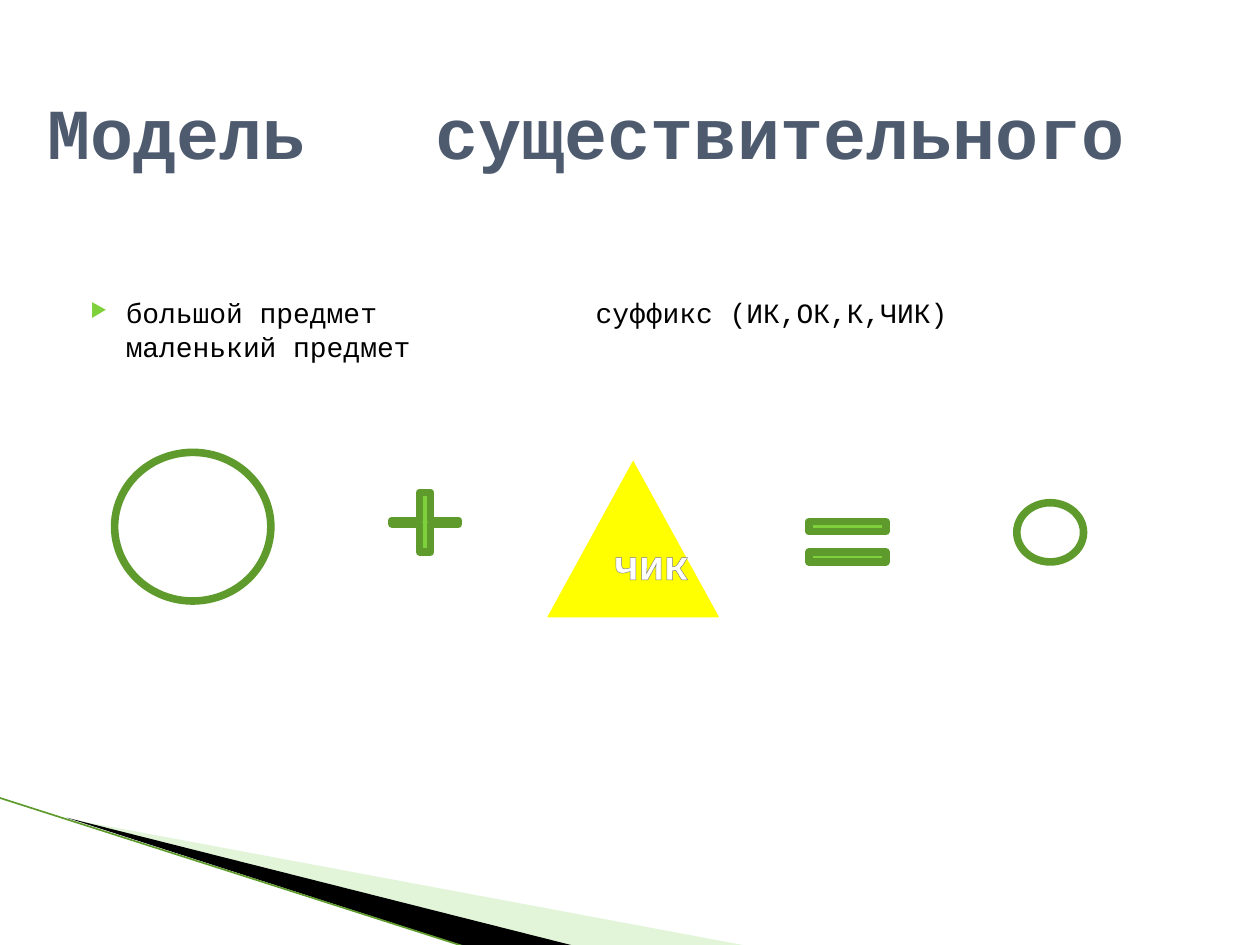
from lxml import etree
from pptx import Presentation
from pptx.dml.color import RGBColor
from pptx.enum import shapes, text
from pptx.oxml.ns import qn
from pptx.util import Inches, Pt

GREEN = RGBColor(0x7F, 0xD1, 0x3B)
DARK_GREEN = RGBColor(0x5E, 0x9B, 0x2C)
PALE_GREEN = RGBColor(0xB8, 0xE7, 0xA1)
YELLOW = RGBColor(0xFF, 0xFF, 0x00)
SLATE = RGBColor(0x4E, 0x5B, 0x6F)
GREY = RGBColor(0x7D, 0x7D, 0x7D)
BLACK = RGBColor(0, 0, 0)
WHITE = RGBColor(0xFF, 0xFF, 0xFF)
FONT = "Courier New"

TITLE = "Модель\tсуществительного"
OBJECTS = "большой предмет\vмаленький предмет"
SUFFIXES = "суффикс (ИК,ОК,К,ЧИК)"
SUFFIX = "чик"

WEDGES = [
    ([(0.55, 6.5), (5.95, 7.51), (4.56, 7.51)], PALE_GREEN, 40),
    ([(0.53, 6.49), (4.57, 7.51), (3.72, 7.52)], BLACK, 100),
]
KIND = shapes.MSO_SHAPE
BAR_TOPS = (4.14, 4.38)
FIGURES = [
    (KIND.OVAL, (0.91, 3.59, 1.24, 1.18), WHITE, DARK_GREEN),
    (KIND.CROSS, (3.11, 3.91, 0.53, 0.47), GREEN, DARK_GREEN),
    *[(KIND.RECTANGLE, (6.42, top, 0.61, 0.08), GREEN, DARK_GREEN) for top in BAR_TOPS],
    (KIND.OVAL, (8.07, 3.99, 0.53, 0.47), WHITE, DARK_GREEN),
    (KIND.ISOSCELES_TRIANGLE, (4.29, 3.59, 1.47, 1.34), YELLOW, WHITE),
]


def add_child(parent, tag, **attributes):
    return etree.SubElement(parent, qn(tag), attributes)


def add_wedge(page, points, color, opacity):
    builder = page.shapes.build_freeform(*map(Inches, points[0]), scale=1.0)
    builder.add_line_segments([tuple(map(Inches, point)) for point in points[1:]])
    wedge = builder.convert_to_shape()
    wedge.shadow.inherit = False
    wedge.fill.solid()
    wedge.fill.fore_color.rgb = color
    wedge.line.fill.background()
    if opacity < 100:
        fill_color = wedge._element.spPr.find(".//" + qn("a:srgbClr"))
        add_child(fill_color, "a:alpha", val=str(opacity * 1000))


def add_figure(page, kind, place, fill, line):
    figure = page.shapes.add_shape(kind, *map(Inches, place))
    figure.shadow.inherit = False
    figure.fill.solid()
    figure.fill.fore_color.rgb = fill
    figure.line.color.rgb = line
    figure.line.width = Pt(4.33)
    if kind == KIND.CROSS:
        figure.adjustments[0] = 0.47


def add_text(page, wording, place, size, color, bold=False, anchor=text.MSO_ANCHOR.TOP):
    box = page.shapes.add_textbox(*map(Inches, place))
    box.text_frame.word_wrap = True
    box.text_frame.vertical_anchor = anchor
    para = box.text_frame.paragraphs[0]
    para.text = wording
    para.font.name = FONT
    para.font.size = Pt(size)
    para.font.bold = bold
    para.font.color.rgb = color
    return para


def add_bullet(para):
    properties = para._p.get_or_add_pPr()
    properties.set("marL", str(Inches(0.4)))
    properties.set("indent", str(Inches(-0.28)))
    bullet_color = etree.Element(qn("a:buClr"))
    add_child(bullet_color, "a:srgbClr", val=str(GREEN))
    bullet_size = etree.Element(qn("a:buSzPct"), val="68000")
    bullet = etree.Element(qn("a:buChar"), char="▶")
    for position, element in enumerate((bullet_color, bullet_size, bullet)):
        properties.insert(position, element)


def add_tab(para, position):
    tabs = etree.Element(qn("a:tabLst"))
    add_child(tabs, "a:tab", pos=str(Inches(position)), algn="l")
    para._p.get_or_add_pPr().insert(0, tabs)


def outline_text(span, color, width):
    outline = etree.Element(qn("a:ln"), w=str(Pt(width)))
    fill = add_child(outline, "a:solidFill")
    add_child(fill, "a:srgbClr", val=str(color))
    span._r.get_or_add_rPr().insert(0, outline)


def main():
    deck = Presentation()
    deck.slide_width, deck.slide_height = Inches(10), Inches(7.5)
    page = deck.slides.add_slide(deck.slide_layouts[6])

    for wedge in WEDGES:
        add_wedge(page, *wedge)
    edge = page.shapes.add_connector(
        shapes.MSO_CONNECTOR.STRAIGHT, *map(Inches, (-0.01, 6.33, 3.71, 7.52)))
    edge.line.color.rgb = DARK_GREEN
    edge.line.width = Pt(0.95)
    add_child(edge._element.spPr, "a:effectLst")

    add_bullet(add_text(page, OBJECTS, (0.5, 2.3, 9, 4.27), 16, BLACK))
    add_text(page, SUFFIXES, (4.63, 2.3, 4.5, 0.4), 16, BLACK)
    title = add_text(page, TITLE, (0.28, 0.52, 9.22, 1.03), 41, SLATE, True,
                     text.MSO_ANCHOR.MIDDLE)
    add_tab(title, 3.08)

    for figure in FIGURES:
        add_figure(page, *figure)
    suffix = add_text(page, SUFFIX, (4.37, 4.22, 1.6, 0.5), 24, WHITE, True)
    suffix.alignment = text.PP_ALIGN.CENTER
    outline_text(suffix.runs[0], GREY, 0.83)

    deck.save("out.pptx")


if __name__ == "__main__":
    main()
